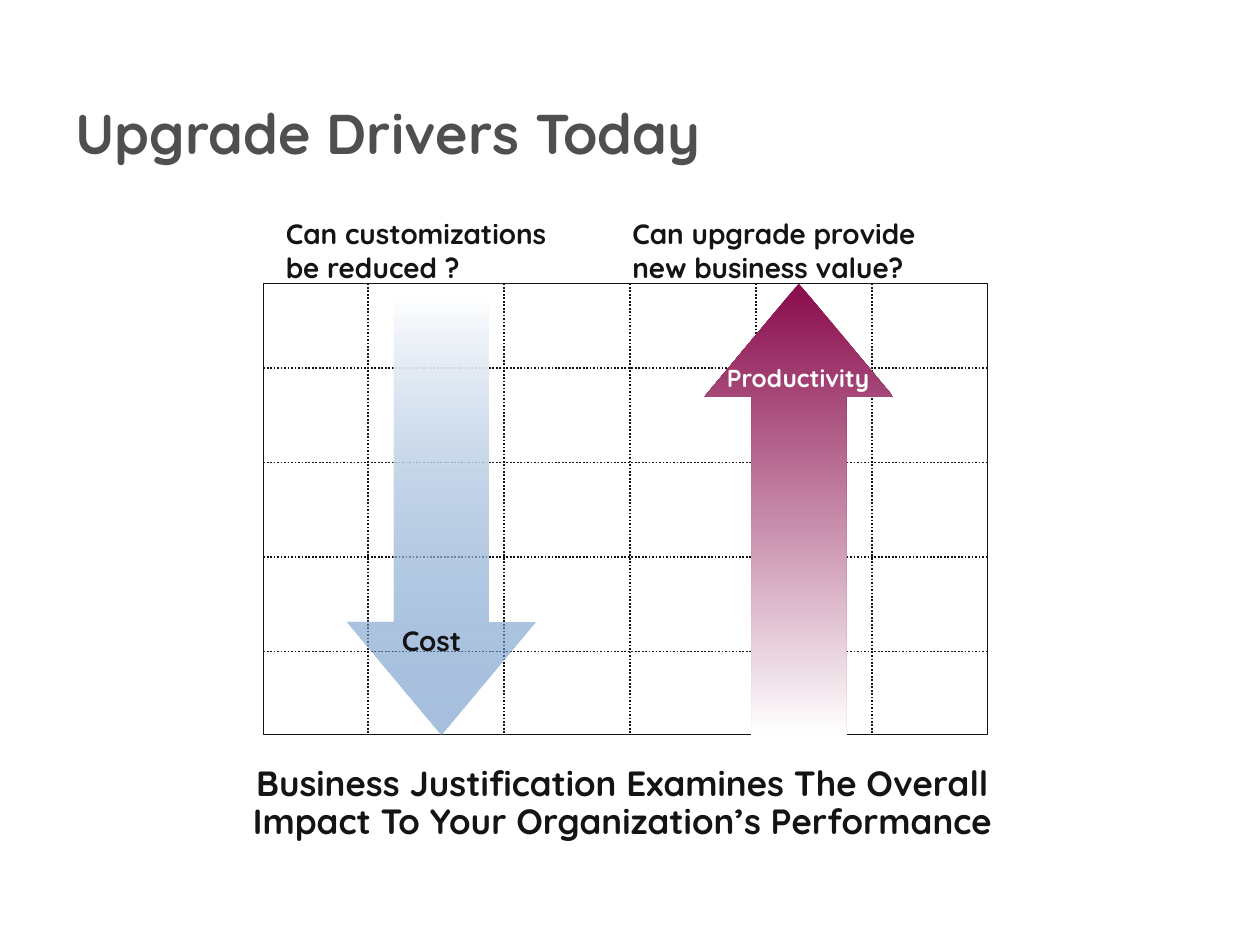
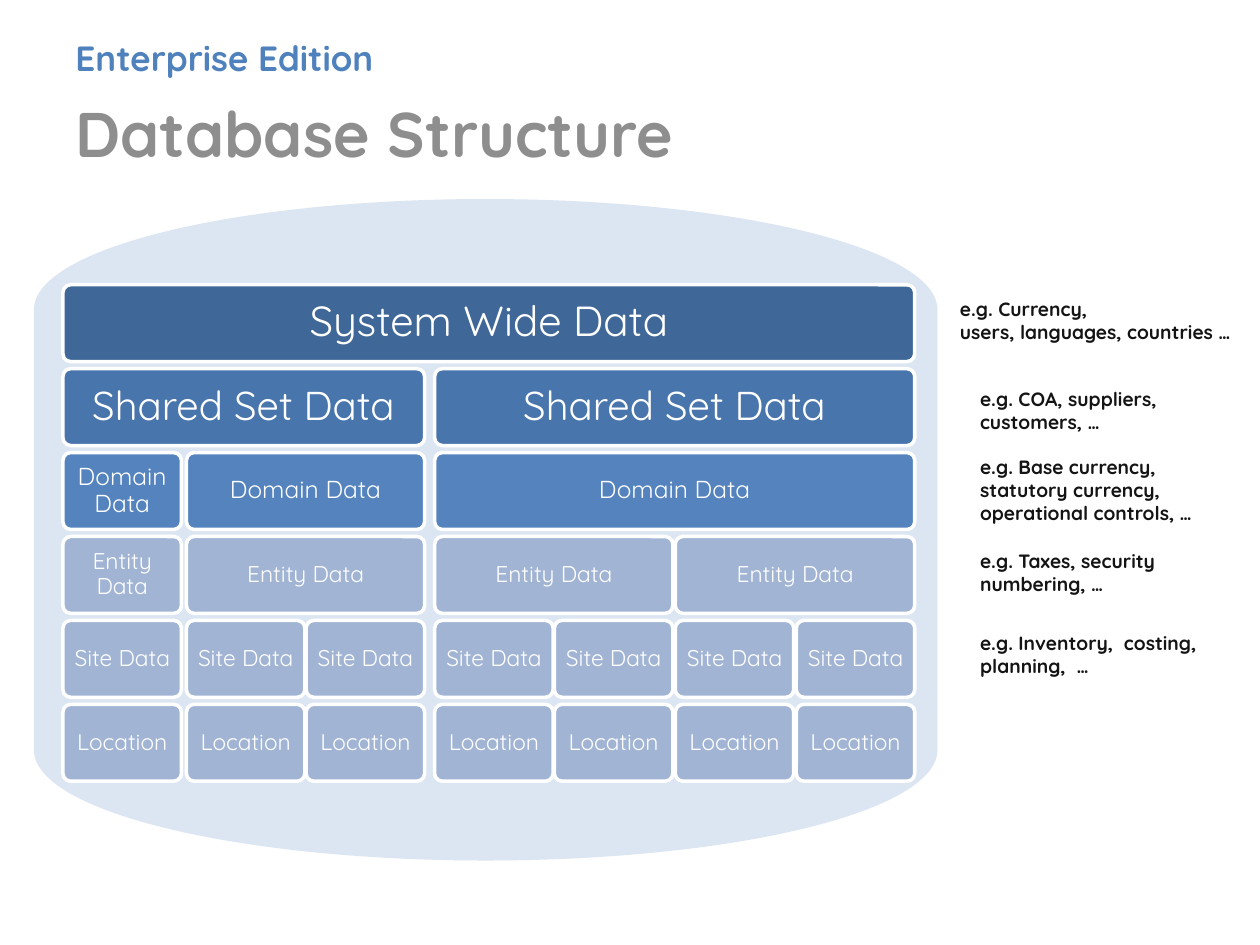
"""Build two slides: upgrade drivers and the layers of a database."""
from dataclasses import dataclass
from itertools import accumulate

from lxml import etree
from pptx import Presentation
from pptx.dml.color import RGBColor
from pptx.enum import dml, shapes, text
from pptx.oxml import ns
from pptx.util import Inches, Pt


@dataclass(frozen=True)
class Theme:
    face: str = "Quicksand"
    ink: str = "141414"
    white: str = "FFFFFF"
    dark: str = "4F4F4F"
    gray: str = "8E8E8E"
    blue: str = "4F81BD"
    plum: str = "890C4C"
    disk: str = "DCE6F2"
    deep: str = "3F6797"
    mid: str = "4875AC"
    soft: str = "5483BE"
    pale: str = "A1B4D4"
    head: int = 32
    big: int = 36
    sub: int = 20
    ask: int = 16
    tag: int = 14
    note: int = 11


T = Theme()
MID = text.MSO_ANCHOR.MIDDLE
FORM = shapes.MSO_SHAPE

TITLES = ["Upgrade Drivers Today", "Database Structure"]
KICKER = "Enterprise Edition"
FRAME = (2.09, 2.25, 5.75, 3.58)
ROWS = [2.92, 3.67, 4.42, 5.17]
COLS = [2.92, 4, 5, 6, 6.92]
ARROWS = [
    (FORM.UP_ARROW, (5.59, 2.25, 1.5, 3.58), T.plum, T.white, 100),
    (FORM.DOWN_ARROW, (2.75, 2.33, 1.5, 3.5), T.white, T.blue, 50),
]
LABELS = [
    ((4.92, 1.67, 2.92, 0.64), "Can upgrade provide \nnew business value?", T.ask, T.ink),
    ((5.67, 2.83, 1.58, 0.34), "Productivity", T.tag, T.white),
    ((3.09, 4.9, 0.75, 0.37), "Cost", T.ask, T.ink),
    ((2.17, 1.67, 2.75, 0.64), "Can customizations \nbe reduced ?", T.ask, T.ink),
]
CLAIM = [
    "Business Justification Examines The Overall ",
    "Impact To Your Organization’s Performance ",
]

LAYERS = [
    ("System Wide Data", T.deep, 24, 0.1, [7]),
    ("Shared Set Data", T.mid, 23, 0.1, [3, 4]),
    ("Domain Data", T.soft, 14, 0.06, [1, 2, 4]),
    ("Entity Data", T.pale, 13, 0.05, [1, 2, 2, 2]),
    ("Site Data ", T.pale, 13, 0.05, [1] * 7),
    ("Location", T.pale, 13, 0.05, [1] * 7),
]
CELL_W, CELL_H = 0.94, 0.61
LEFT, TOP, STEP = 0.5, 2.26, 0.666
GAPS = [0.04, 0.01, 0.08, 0.01, 0.02, 0.02]
NOTES = [
    ((7.52, 2.26, 2.4, 0.76), ["e.g. Currency,", "users, languages, countries …"]),
    ((7.68, 2.97, 2.32, 0.57), ["e.g. COA, suppliers, \ncustomers, …"]),
    ((7.68, 3.51, 2.32, 0.76),
     ["e.g. Base currency, statutory currency, operational controls, …"]),
    ((7.68, 4.26, 2.32, 0.57), ["e.g. Taxes, security\nnumbering, …"]),
    ((7.68, 4.91, 2.32, 0.57), ["e.g. Inventory,  costing,", "planning,  …"]),
]


def rgb(tone):
    return RGBColor.from_string(tone)


def place(at):
    return [Inches(n) for n in at]


def write(shape, lines, size, tone, bold=True, center=False, anchor=None, inset=None):
    frame = shape.text_frame
    frame.word_wrap = True
    frame.vertical_anchor = anchor or text.MSO_ANCHOR.TOP
    if inset is not None:
        frame.margin_left = frame.margin_right = Inches(inset)
        frame.margin_top = frame.margin_bottom = Inches(inset)
    for i, line in enumerate(lines):
        para = frame.add_paragraph() if i else frame.paragraphs[0]
        para.text = line
        para.alignment = text.PP_ALIGN.CENTER if center else text.PP_ALIGN.LEFT
        if center:
            para.line_spacing = 0.9
        font = para.font
        font.name, font.size, font.bold = T.face, Pt(size), bold
        font.color.rgb = rgb(tone)


def label(slide, at, lines, size, tone, **style):
    write(slide.shapes.add_textbox(*place(at)), lines, size, tone, **style)


def title(slide, line, size, tone):
    label(slide, (0.5, 0.66, 9, 0.78), [line], size, tone, anchor=MID)


def draw(slide, form, at, fill=None, line=None, width=1):
    shape = slide.shapes.add_shape(form, *place(at))
    shape.shadow.inherit = False
    if fill:
        shape.fill.solid()
        shape.fill.fore_color.rgb = rgb(fill)
    else:
        shape.fill.background()
    if line:
        shape.line.color.rgb = rgb(line)
        shape.line.width = Pt(width)
    else:
        shape.line.fill.background()
    return shape


def dotted(slide, *ends):
    line = slide.shapes.add_connector(shapes.MSO_CONNECTOR.STRAIGHT, *place(ends))
    line.line.color.rgb = rgb(T.ink)
    line.line.width = Pt(1)
    line.line.dash_style = dml.MSO_LINE.ROUND_DOT
    props = line.element.find(ns.qn("p:spPr"))
    etree.SubElement(props, ns.qn("a:effectLst"))


def arrow(slide, form, at, start, end, alpha):
    shape = draw(slide, form, at)
    shape.adjustments[0], shape.adjustments[1] = 0.5, 0.6
    shape.fill.gradient()
    shape.fill.gradient_angle = 270
    for stop, tone in zip(shape.fill.gradient_stops, (start, end)):
        stop.color.rgb = rgb(tone)
    if alpha < 100:
        last = list(shape.element.iter(ns.qn("a:srgbClr")))[-1]
        etree.SubElement(last, ns.qn("a:alpha"), val=str(alpha * 1000))


def drivers(slide):
    x, y, w, h = FRAME
    draw(slide, FORM.RECTANGLE, FRAME, line=T.ink, width=0.75)
    for row in ROWS:
        dotted(slide, x, row, x + w, row)
    for col in COLS:
        dotted(slide, col, y, col, y + h)
    for spec_row in ARROWS:
        arrow(slide, *spec_row)
    for at, line, size, tone in LABELS:
        label(slide, at, [line], size, tone)
    label(slide, (0.94, 6.03, 8.08, 0.71), CLAIM, T.sub, T.ink, center=True)
    title(slide, TITLES[0], T.head, T.dark)


def layers(slide):
    draw(slide, FORM.FLOWCHART_MAGNETIC_DISK, (0.27, 1.58, 7.17, 5.25), T.disk)
    lefts = list(accumulate((CELL_W + gap for gap in GAPS), initial=LEFT))
    for row, (name, fill, size, inset, spans) in enumerate(LAYERS):
        col = 0
        for span in spans:
            wide = lefts[col + span - 1] + CELL_W - lefts[col]
            at = (lefts[col], TOP + row * STEP, wide, CELL_H)
            cell = draw(slide, FORM.ROUNDED_RECTANGLE, at, fill, T.white, 2)
            cell.adjustments[0] = 0.1
            write(cell, [name], size, T.white, bold=False, center=True,
                  anchor=MID, inset=inset)
            col += span
    title(slide, TITLES[1], T.big, T.gray)
    label(slide, (0.5, 0.2, 9, 0.47), [KICKER], T.sub, T.blue,
          anchor=text.MSO_ANCHOR.BOTTOM)
    for at, lines in NOTES:
        label(slide, at, lines, T.note, T.ink, inset=0.1)


def main():
    deck = Presentation()
    deck.slide_width, deck.slide_height = Inches(10), Inches(7.5)
    for build in (drivers, layers):
        build(deck.slides.add_slide(deck.slide_layouts[6]))
    deck.save("out.pptx")


if __name__ == "__main__":
    main()
